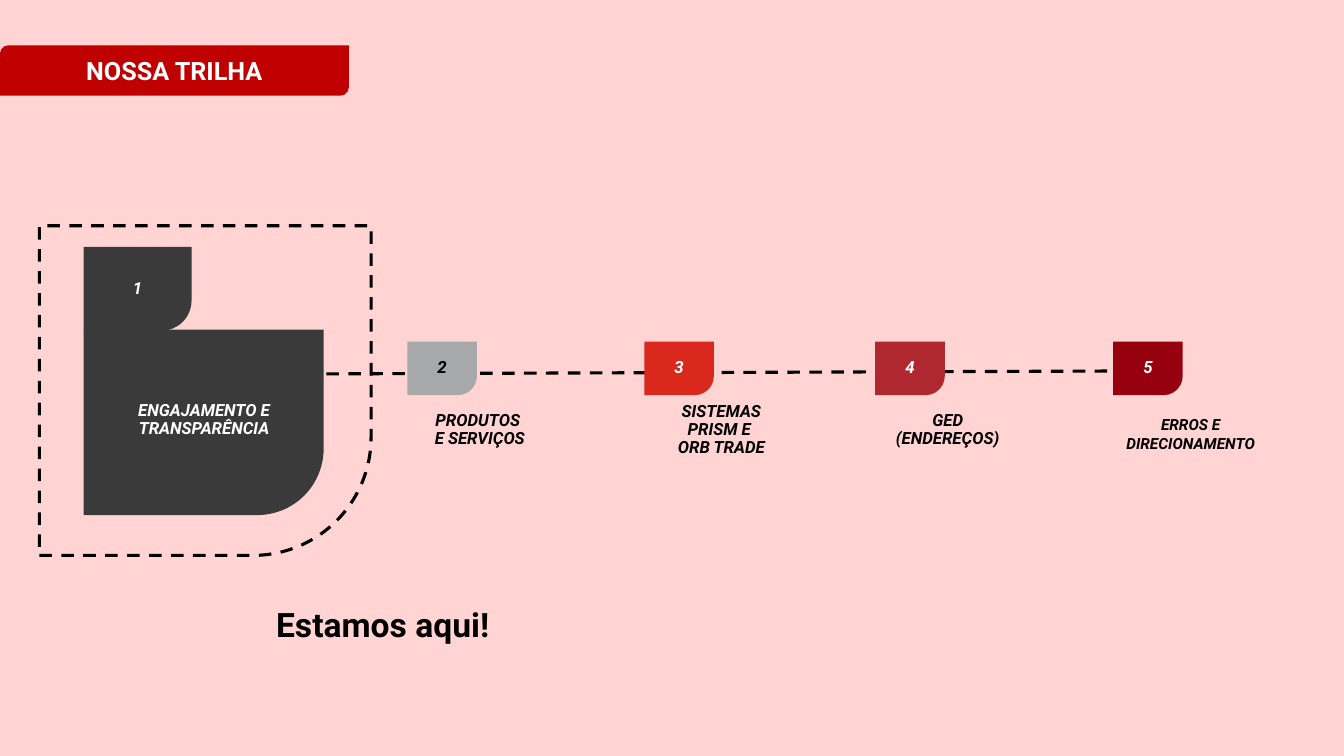
import pptx
import pptx.util
import pptx.dml.color
import pptx.enum.dml
import pptx.enum.shapes
import pptx.enum.text
import pptx.oxml
from pptx.util import Inches

COLOURS = {
    "background": "FFD4D3",
    "banner": "C00000",
    "engagement": "3A3A3A",
    "products": "A7A8AA",
    "systems": "DA291C",
    "addresses": "AF272F",
    "errors": "96000F",
    "black": "000000",
    "white": "FFFFFF",
}

STEP = {"size": pptx.util.Pt(12), "bold": True, "italic": True}
LAST_STEP = {**STEP, "size": pptx.util.Pt(11)}
TITLE = {"size": pptx.util.Pt(18), "bold": True}
HERE = {"size": pptx.util.Pt(24), "bold": True}

TILE_TOP, TILE_WIDTH, TILE_HEIGHT = 3.39, 0.69, 0.53
STAGES = [
    ("2", "products", "black", 4.04, "PRODUTOS \vE SERVIÇOS", (4.08, 3.97, 1.36, 0.6), STEP, 0.9),
    ("3", "systems", "white", 6.39, "SISTEMAS PRISM E \vORB TRADE", (6.39, 3.97, 1.53, 0.6), STEP, 0.9),
    ("4", "addresses", "white", 8.68, "GED (ENDEREÇOS)", (8.72, 3.97, 1.36, 0.6), STEP, 0.9),
    ("5", "errors", "white", 11.04, "ERROS E DIRECIONAMENTO", (11.04, 4.06, 1.54, 0.49), LAST_STEP, 1.0),
]


def rgb(colour):
    return pptx.dml.color.RGBColor.from_string(COLOURS[colour])


def write(frame, text, colour, formats, align="CENTER", spacing=1.0):
    frame.word_wrap = True
    paragraph = frame.paragraphs[0]
    paragraph.text = text
    paragraph.alignment = getattr(pptx.enum.text.PP_ALIGN, align)
    paragraph.line_spacing = spacing
    for run in paragraph.runs:
        run.font.name = "Roboto"
        run.font.color.rgb = rgb(colour)
        for attribute, value in formats.items():
            setattr(run.font, attribute, value)


def add_label(shapes, box, text, colour, formats=STEP, spacing=0.9):
    frame = shapes.add_textbox(*map(Inches, box)).text_frame
    frame.vertical_anchor = pptx.enum.text.MSO_ANCHOR.MIDDLE
    for side in ("left", "right", "top", "bottom"):
        setattr(frame, f"margin_{side}", Inches(0.11))
    write(frame, text, colour, formats, spacing=spacing)


def dash(line):
    line.color.rgb = rgb("black")
    line.width = pptx.util.Pt(2.25)
    line.dash_style = pptx.enum.dml.MSO_LINE.DASH


def add_leaf(shapes, box, fill=None):
    leaf = shapes.add_shape(
        pptx.enum.shapes.MSO_SHAPE.ROUND_1_RECTANGLE, *map(Inches, box))
    leaf.adjustments[0] = 0.358
    leaf.rotation = 180
    leaf._element.spPr.xfrm.set("flipH", "1")
    leaf.shadow.inherit = False
    if fill:
        leaf.fill.solid()
        leaf.fill.fore_color.rgb = rgb(fill)
        leaf.line.fill.background()
    else:
        leaf.fill.background()
        dash(leaf.line)


def add_number_tile(shapes, box, number, fill, colour):
    add_leaf(shapes, box, fill)
    add_label(shapes, box, number, colour)


def add_trail(shapes):
    trail = shapes.add_connector(
        pptx.enum.shapes.MSO_CONNECTOR.STRAIGHT,
        *map(Inches, (3.02, 3.71, 11.28, 3.68)))
    dash(trail.line)
    trail._element.spPr.append(pptx.oxml.parse_xml(
        '<a:effectLst xmlns:a="http://schemas.openxmlformats.org/drawingml/2006/main"/>'))


def add_current_stage(shapes):
    stage = shapes.add_group_shape().shapes
    add_leaf(stage, (0.83, 3.27, 2.38, 1.84), "engagement")
    add_number_tile(stage, (0.83, 2.45, 1.07, 0.83), "1", "engagement", "white")
    add_label(stage, (0.96, 3.71, 2.13, 0.92), "ENGAJAMENTO E TRANSPARÊNCIA", "white")


def add_next_stages(shapes):
    for number, fill, colour, left, name, name_box, formats, spacing in STAGES:
        stage = shapes.add_group_shape().shapes
        tile_box = (left, TILE_TOP, TILE_WIDTH, TILE_HEIGHT)
        add_number_tile(stage, tile_box, number, fill, colour)
        add_label(stage, name_box, name, "black", formats, spacing)


def add_banner(shapes):
    banner = shapes.add_shape(
        pptx.enum.shapes.MSO_SHAPE.ROUND_2_DIAG_RECTANGLE,
        *map(Inches, (0, 0.45, 3.46, 0.5)))
    banner.shadow.inherit = False
    banner.fill.solid()
    banner.fill.fore_color.rgb = rgb("banner")
    banner.line.fill.background()
    banner.text_frame.vertical_anchor = pptx.enum.text.MSO_ANCHOR.MIDDLE
    write(banner.text_frame, "NOSSA TRILHA", "white", TITLE)


def add_here_note(shapes):
    note = shapes.add_textbox(*map(Inches, (2.64, 5.94, 3.83, 0.5)))
    write(note.text_frame, "Estamos aqui!", "black", HERE, align="LEFT")
    note.text_frame.auto_size = pptx.enum.text.MSO_AUTO_SIZE.SHAPE_TO_FIT_TEXT


def main():
    deck = pptx.Presentation()
    deck.slide_width, deck.slide_height = Inches(13.33), Inches(7.5)
    slide = deck.slides.add_slide(deck.slide_layouts[6])
    slide.background.fill.solid()
    slide.background.fill.fore_color.rgb = rgb("background")
    add_trail(slide.shapes)
    add_current_stage(slide.shapes)
    add_next_stages(slide.shapes)
    add_leaf(slide.shapes, (0.39, 2.24, 3.29, 3.27))
    add_banner(slide.shapes)
    add_here_note(slide.shapes)
    deck.save("out.pptx")


if __name__ == "__main__":
    main()
